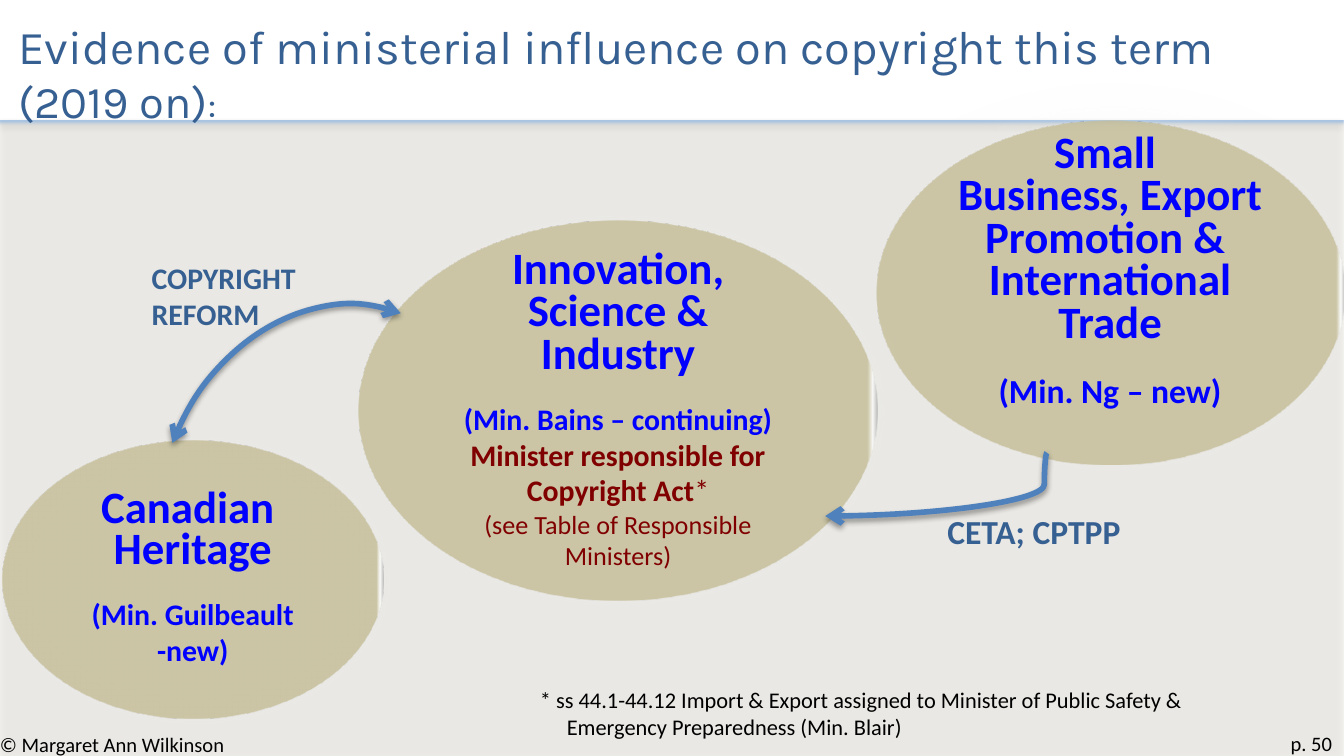
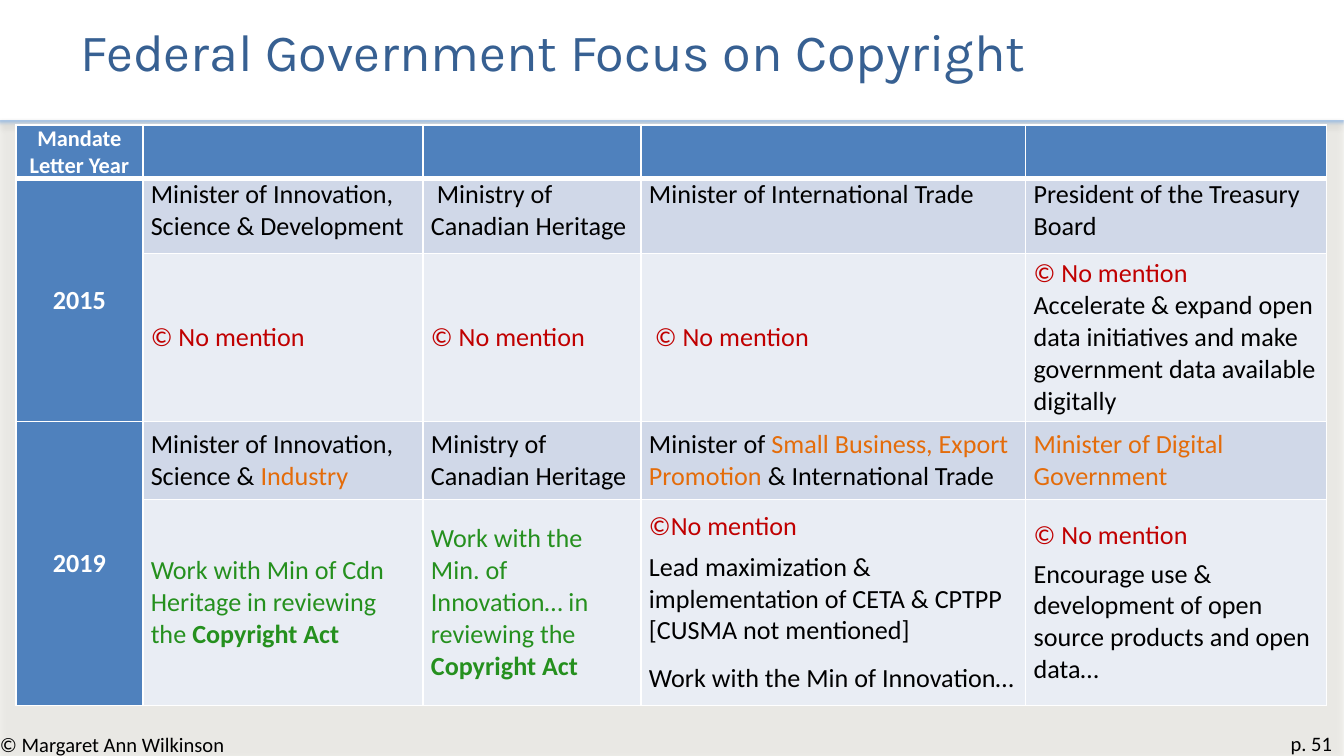
from dataclasses import dataclass, field
from typing import Optional

from lxml.etree import SubElement
from pptx import Presentation
from pptx.dml.color import RGBColor as Rgb
from pptx.enum.shapes import MSO_CONNECTOR as Link, MSO_SHAPE as Preset
from pptx.enum.text import MSO_ANCHOR as Anchor, MSO_AUTO_SIZE as Fit, PP_ALIGN as Align
from pptx.oxml import parse_xml
from pptx.oxml.ns import nsdecls, qn
from pptx.util import Pt

# Shared colours and fonts
COLORS = {
    "white": "FFFFFF", "black": "000000", "title": "376092", "line": "4F81BD",
    "band_top": "558ED5", "band": "DDD9C3", "rim": "A6A6A6", "tan": "C4BD97",
    "glow": "F2F2F2", "ministry": "0000FF", "duty": "800000",
    "none": "C00000", "changed": "E46C0A", "task": "25901E",
    "row_dark": "D0D8E8", "row_light": "E9EDF4",
}
BODY, HEADING = "Calibri", "Karla"


# Descriptions of repeated elements
@dataclass
class Span:
    text: str
    color: str = "black"
    size: float = 14
    bold: bool = False
    name: str = BODY


@dataclass
class Para:
    spans: list[Span]
    align: Align = Align.LEFT
    before: float = 0
    line: Optional[float] = None
    hang: float = 0


@dataclass
class Area:
    left: float
    top: float
    width: float
    height: float

    def lengths(self) -> list[Pt]:
        return [Pt(v) for v in (self.left, self.top, self.width, self.height)]


@dataclass
class Shadow:
    color: str
    opacity: int
    blur: float
    distance: float
    angle: int


@dataclass
class Ministry:
    area: Area
    paras: list[Para]
    side: float = 0
    bottom: float = 3.6


@dataclass
class Cell:
    paras: list[Para] = field(default_factory=list)
    anchor: Anchor = Anchor.MIDDLE


BAND_SHADOW = Shadow("black", 35, 3.1, 1.8, 90)
GLOW = Shadow("glow", 35, 22.8, 1.8, 0)
LINE_SHADOW = Shadow("black", 38, 3.1, 1.6, 90)


# Formatting helpers
def assign(target, values: dict) -> None:
    for key, value in values.items():
        setattr(target, key, value)


def write(frame, paras: list[Para]) -> None:
    for index, item in enumerate(paras):
        para = frame.paragraphs[0] if index == 0 else frame.add_paragraph()
        if item.hang:
            assign_hang = {"marL": Pt(item.hang), "indent": -Pt(item.hang)}
            for key, value in assign_hang.items():
                para._p.get_or_add_pPr().set(key, str(value))
        assign(para, {"alignment": item.align,
                      "line_spacing": Pt(item.line) if item.line else None})
        if index and item.before:
            para.space_before = Pt(item.before)
        for span in item.spans:
            run = para.add_run()
            run.text = span.text
            assign(run.font, {"name": span.name, "size": Pt(span.size), "bold": span.bold})
            run.font.color.rgb = Rgb.from_string(COLORS[span.color])


def color_xml(color: str, opacity: int) -> str:
    return (f'<a:srgbClr val="{COLORS[color]}">'
            f'<a:alpha val="{opacity * 1000}"/></a:srgbClr>')


def set_gradient(shape, stops: list[tuple[int, str, int]], angle: int) -> None:
    shape.fill.gradient()
    old = shape._element.spPr.find(qn("a:gradFill"))
    marks = "".join(f'<a:gs pos="{place * 1000}">{color_xml(color, opacity)}</a:gs>'
                    for place, color, opacity in stops)
    new = parse_xml(f'<a:gradFill {nsdecls("a")} rotWithShape="1"><a:gsLst>{marks}</a:gsLst>'
                    f'<a:lin ang="{angle * 60000}" scaled="0"/></a:gradFill>')
    old.getparent().replace(old, new)
    shape.line.fill.background()


def set_shadow(shape, shadow: Shadow) -> None:
    shape._element.spPr.append(parse_xml(
        f'<a:effectLst {nsdecls("a")}><a:outerShdw blurRad="{Pt(shadow.blur)}" '
        f'dist="{Pt(shadow.distance)}" dir="{shadow.angle * 60000}" rotWithShape="0">'
        f'{color_xml(shadow.color, shadow.opacity)}</a:outerShdw></a:effectLst>'))


def style_arrow(shape, ends: list[str]) -> None:
    shape.line.color.rgb = Rgb.from_string(COLORS["line"])
    shape.line.width = Pt(3)
    for end in ends:
        SubElement(shape.line._get_or_add_ln(), qn(f"a:{end}")).set("type", "arrow")
    set_shadow(shape, LINE_SHADOW)


# Drawing functions
def add_text(page, area: Area, paras: list[Para], anchor: Anchor = Anchor.TOP,
             wrap: bool = True, grow: bool = True) -> None:
    box = page.shapes.add_textbox(*area.lengths())
    assign(box.text_frame, {"word_wrap": wrap, "vertical_anchor": anchor,
                            "auto_size": Fit.SHAPE_TO_FIT_TEXT if grow else Fit.NONE})
    write(box.text_frame, paras)


def add_page(deck, number: int, title_area: Area, title: list[Span]):
    page = deck.slides.add_slide(deck.slide_layouts[6])
    band = page.shapes.add_shape(Preset.RECTANGLE, *Area(0, 64.8, 720, 340.2).lengths())
    set_gradient(band, [(0, "band_top", 70), (1, "band", 20)], 90)
    set_shadow(band, BAND_SHADOW)
    add_text(page, Area(666, 388, 54.7, 20.9), [Para([Span(f"p. {number}", size=11)], Align.RIGHT)])
    add_text(page, Area(-7.2, 388.5, 215, 20.9), [Para([Span("© Margaret Ann Wilkinson", size=11)])])
    add_text(page, title_area, [Para(title)], Anchor.MIDDLE, grow=False)
    return page


def add_ministry(page, ministry: Ministry) -> None:
    oval = page.shapes.add_shape(Preset.OVAL, *ministry.area.lengths())
    set_gradient(oval, [(0, "rim", 80), (1, "white", 80), (2, "tan", 80)], 180)
    set_shadow(oval, GLOW)
    assign(oval.text_frame, {
        "word_wrap": True, "vertical_anchor": Anchor.MIDDLE,
        "margin_left": Pt(ministry.side), "margin_right": Pt(ministry.side),
        "margin_top": Pt(3.6), "margin_bottom": Pt(ministry.bottom)})
    write(oval.text_frame, ministry.paras)


def add_borders(cell, widths: dict[str, float]) -> None:
    for index, (side, width) in enumerate(widths.items()):
        cell._tc.get_or_add_tcPr().insert(index, parse_xml(
            f'<a:ln{side} {nsdecls("a")} w="{Pt(width)}"><a:solidFill>'
            f'{color_xml("white", 100)}</a:solidFill></a:ln{side}>'))


def add_grid(page, area: Area, columns: list[float], heights: list[float],
             rows: list[list[Cell]]) -> None:
    table = page.shapes.add_table(len(heights), len(columns), *area.lengths()).table
    assign(table, {"first_row": False, "horz_banding": False})
    for column, width in zip(table.columns, columns):
        column.width = Pt(width)
    for row, height in zip(table.rows, heights):
        row.height = Pt(height)
    for r, row in enumerate(rows):
        for c, item in enumerate(row):
            cell = table.cell(r, c)
            assign(cell, {"margin_left": Pt(4.3), "margin_right": Pt(4.3), "margin_top": 0,
                          "margin_bottom": 0, "vertical_anchor": item.anchor})
            shade = "line" if r == 0 or c == 0 else "row_dark" if r % 2 else "row_light"
            cell.fill.solid()
            cell.fill.fore_color.rgb = Rgb.from_string(COLORS[shade])
            add_borders(cell, {"L": 1, "R": 1, "T": 3 if r == 1 else 1, "B": 3 if r == 0 else 1})
            write(cell.text_frame, item.paras)
    for first in (1, 3):
        table.cell(first, 0).merge(table.cell(first + 1, 0))


# Text shorthands
def name_lines(lines: list[str], line: float) -> list[Para]:
    return [Para([Span(text, "ministry", 24, True)], Align.CENTER, line=line) for text in lines]


def minister(text: str, size: float) -> Para:
    return Para([Span(text, "ministry", size, True)], Align.CENTER, before=12)


def label(text: str, size: float) -> Para:
    return Para([Span(text, "title", size, True)])


def heading(text: str, size: float) -> Span:
    return Span(text, "title", size, name=HEADING)


def plain(*spans: Span, anchor: Anchor = Anchor.MIDDLE) -> Cell:
    return Cell([Para(list(spans))], anchor)


def side_head(text: str, size: float = 14, anchor: Anchor = Anchor.MIDDLE) -> Cell:
    return Cell([Para([Span(text, "white", size, True)], Align.CENTER)], anchor)


# Slide: ministries and their links
def build_influence(deck) -> None:
    page = add_page(deck, 50, Area(2.9, 13, 717, 51.8), [
        heading("Evidence of ministerial influence on copyright this term ", 25.2),
        heading("(2019 on)", 24.3), heading(":", 19.8)])
    center = Align.CENTER
    ministries = [
        Ministry(Area(1.4, 236.2, 203.8, 149), name_lines(["Canadian ", "Heritage"], 21.8)
                 + [minister("(Min. Guilbeault -new)", 16)]),
        Ministry(Area(469.4, 64.8, 250.6, 184.3), name_lines(
            ["Small ", "Business, Export Promotion & ", "International Trade"], 22.8)
            + [minister("(Min. Ng – new)", 18)], bottom=25.6),
        Ministry(Area(192.2, 118.1, 277.9, 203.8), name_lines(["Innovation, Science & Industry"], 22.8) + [
            minister("(Min. Bains – continuing)", 16),
            Para([Span("Minister responsible for Copyright Act", "duty", 16, True),
                  Span("*", "duty", 16)], center),
            Para([Span("(see Table of Responsible Ministers)", "duty")], center)], side=7.2),
    ]
    for ministry in ministries:
        add_ministry(page, ministry)

    # Trade link
    link = page.shapes.add_connector(Link.CURVE, Pt(560.9), Pt(242.6), Pt(442.1), Pt(276.5))
    geometry = link._element.spPr.find(qn("a:prstGeom"))
    guides = geometry.find(qn("a:avLst"))
    if guides is None:
        guides = SubElement(geometry, qn("a:avLst"))
    guide = SubElement(guides, qn("a:gd"))
    guide.set("name", "adj1")
    guide.set("fmla", "val 1200")
    style_arrow(link, ["tailEnd"])

    # Notes and labels
    add_text(page, Area(282.2, 364.3, 391, 36), [Para([Span(
        "* ss 44.1-44.12 Import & Export assigned to Minister of Public Safety & "
        "Emergency Preparedness (Min. Blair)", size=12)], hang=14.4)])
    add_text(page, Area(74.2, 135.4, 96.5, 46), [label("COPYRIGHT", 16), label("REFORM", 16)], wrap=False)
    add_text(page, Area(500.4, 270, 108, 29), [label("CETA; CPTPP", 18)], wrap=False)

    # Reform link
    arc = page.shapes.add_shape(Preset.ARC, *Area(67, 180, 217.4, 178.6).lengths())
    arc.rotation = 291
    arc.fill.background()
    style_arrow(arc, ["headEnd", "tailEnd"])


# Slide: mandate letters by year
def build_focus(deck) -> None:
    page = add_page(deck, 51, Area(36, 1.4, 648, 51.8),
                    [heading("Federal Government Focus on Copyright", 28)])
    silent = Span("© No mention", "none")
    act = Span("Copyright Act", "task", bold=True)
    offices = ["Minister of Innovation, Science & Development", " Ministry of Canadian Heritage",
               "Minister of International Trade", "President of the Treasury Board"]
    rows = [
        [side_head("Mandate Letter Year", 12, Anchor.BOTTOM)] + [Cell() for _ in offices],
        [side_head("2015")] + [plain(Span(text), anchor=Anchor.TOP) for text in offices],
        [Cell(), plain(silent), plain(silent), plain(Span(" © No mention", "none")),
         Cell([Para([silent]), Para([Span("Accelerate & expand open data initiatives and make "
                                          "government data available digitally")])])],
        [side_head("2019"),
         plain(Span("Minister of Innovation, Science & "), Span("Industry", "changed")),
         plain(Span("Ministry of Canadian Heritage")),
         plain(Span("Minister of "), Span("Small Business, Export Promotion", "changed"),
               Span(" & International Trade")),
         plain(Span("Minister of Digital Government", "changed"))],
        [Cell(),
         plain(Span("Work with Min of Cdn Heritage in reviewing the ", "task"), act),
         plain(Span("Work with the Min. of Innovation… in reviewing the ", "task"), act),
         Cell([Para([Span("©No mention", "none")]),
               Para([Span("Lead maximization & implementation of CETA & CPTPP")], before=4.9),
               Para([Span("[CUSMA not mentioned]")]),
               Para([Span("Work with the Min of Innovation…")], before=8.5)]),
         Cell([Para([silent]),
               Para([Span("Encourage use & development of open source products and open data…")],
                    before=3.7)])],
    ]
    add_grid(page, Area(8.6, 67, 702, 311.8), [67.9, 150.1, 116.8, 206.1, 161.1],
             [26, 40, 90, 41.8, 110.4], rows)


def main() -> None:
    deck = Presentation()
    assign(deck, {"slide_width": Pt(720), "slide_height": Pt(405)})
    build_influence(deck)
    build_focus(deck)
    deck.save("out.pptx")


if __name__ == "__main__":
    main()
